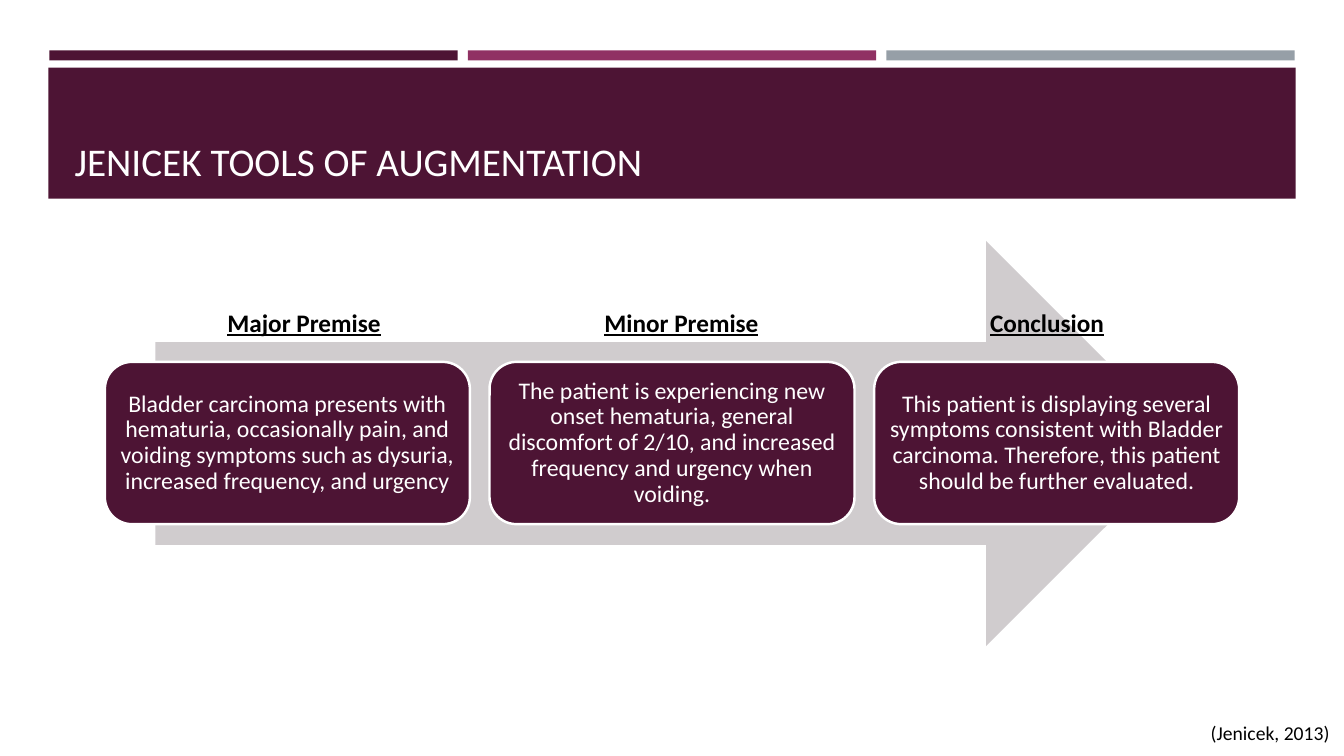
"""Build the slide that shows two premises leading to a conclusion."""
from pptx import Presentation
from pptx.dml.color import RGBColor
from pptx.enum import shapes, text
from pptx.util import Inches, Pt

FONT = "Calibri"
COLORS = {
    "plum": "4D1434",
    "magenta": "903163",
    "slate": "969FA7",
    "arrow": "D0CCCE",
    "white": "FFFFFF",
    "black": "000000",
}
BARS = ["plum", "magenta", "slate"]
STEPS = [
    ("Major Premise", 1.59, 2.85,
     "Bladder carcinoma presents with hematuria, occasionally pain, and "
     "voiding symptoms such as dysuria, increased frequency, and urgency"),
    ("Minor Premise", 5.31, 2.9,
     "The patient is experiencing new onset hematuria, general discomfort "
     "of 2/10, and increased frequency and urgency when voiding."),
    ("Conclusion", 8.96, 2.85,
     "This patient is displaying several symptoms consistent with Bladder "
     "carcinoma. Therefore, this patient should be further evaluated."),
]


def color(name):
    """Return the named colour."""
    return RGBColor.from_string(COLORS[name])


def write(frame, wording, size, ink, align=text.PP_ALIGN.LEFT):
    """Put one formatted paragraph in a text frame and return it."""
    frame.word_wrap = True
    frame.auto_size = text.MSO_AUTO_SIZE.NONE
    paragraph = frame.paragraphs[0]
    paragraph.text = wording
    paragraph.alignment = align
    paragraph.font.name = FONT
    paragraph.font.size = Pt(size)
    paragraph.font.color.rgb = color(ink)
    return paragraph


def add_block(slide, kind, box, fill):
    """Add a flat filled shape without an outline."""
    block = slide.shapes.add_shape(kind, *map(Inches, box))
    block.shadow.inherit = False
    block.fill.solid()
    block.fill.fore_color.rgb = color(fill)
    block.line.fill.background()
    return block


def add_header(slide):
    """Draw the three bars and the band, with the title above them."""
    rectangle = shapes.MSO_SHAPE.RECTANGLE
    for column, fill in enumerate(BARS):
        add_block(slide, rectangle, (0.49 + 4.15 * column, 0.5, 4.05, 0.1), fill)
    add_block(slide, rectangle, (0.48, 0.67, 12.37, 1.3), "plum")

    title = slide.shapes.title
    title.left, title.top = Inches(0.64), Inches(0.77)
    title.width, title.height = Inches(12.06), Inches(1.11)
    write(title.text_frame, "JENICEK TOOLS OF AUGMENTATION", 28, "white")
    title.text_frame.vertical_anchor = text.MSO_ANCHOR.BOTTOM
    title.element.getparent().append(title.element)


def add_statement(slide, left, wording):
    """Add a rounded box that holds one statement of the argument."""
    box = (left, 3.59, 3.62, 1.61)
    statement = add_block(slide, shapes.MSO_SHAPE.ROUNDED_RECTANGLE, box, "plum")
    statement.line.color.rgb = color("white")
    statement.line.width = Pt(1.75)
    frame = statement.text_frame
    frame.margin_left = frame.margin_right = Inches(0.07)
    frame.margin_top = frame.margin_bottom = Inches(0.07)
    frame.vertical_anchor = text.MSO_ANCHOR.MIDDLE
    paragraph = write(frame, wording, 17, "white", text.PP_ALIGN.CENTER)
    paragraph.line_spacing = 0.9


def add_label(slide, box, wording, size, align=text.PP_ALIGN.LEFT):
    """Add a line of black text and return its paragraph."""
    label = slide.shapes.add_textbox(*map(Inches, box))
    return write(label.text_frame, wording, size, "black", align)


def main():
    """Build and save the slide."""
    deck = Presentation()
    deck.slide_width, deck.slide_height = Inches(13.33), Inches(7.5)
    slide = deck.slides.add_slide(deck.slide_layouts[5])

    add_header(slide)
    add_block(slide, shapes.MSO_SHAPE.RIGHT_ARROW, (1.54, 2.39, 10.25, 4.02), "arrow")
    for column, (heading, left, width, wording) in enumerate(STEPS):
        add_statement(slide, 1.04 + 3.815 * column, wording)
        label = add_label(slide, (left, 3, width, 0.4), heading, 18, text.PP_ALIGN.CENTER)
        label.font.bold = label.font.underline = True
    add_label(slide, (11.91, 7.1, 1.42, 0.34), "(Jenicek, 2013)", 14)

    deck.save("out.pptx")


if __name__ == "__main__":
    main()
